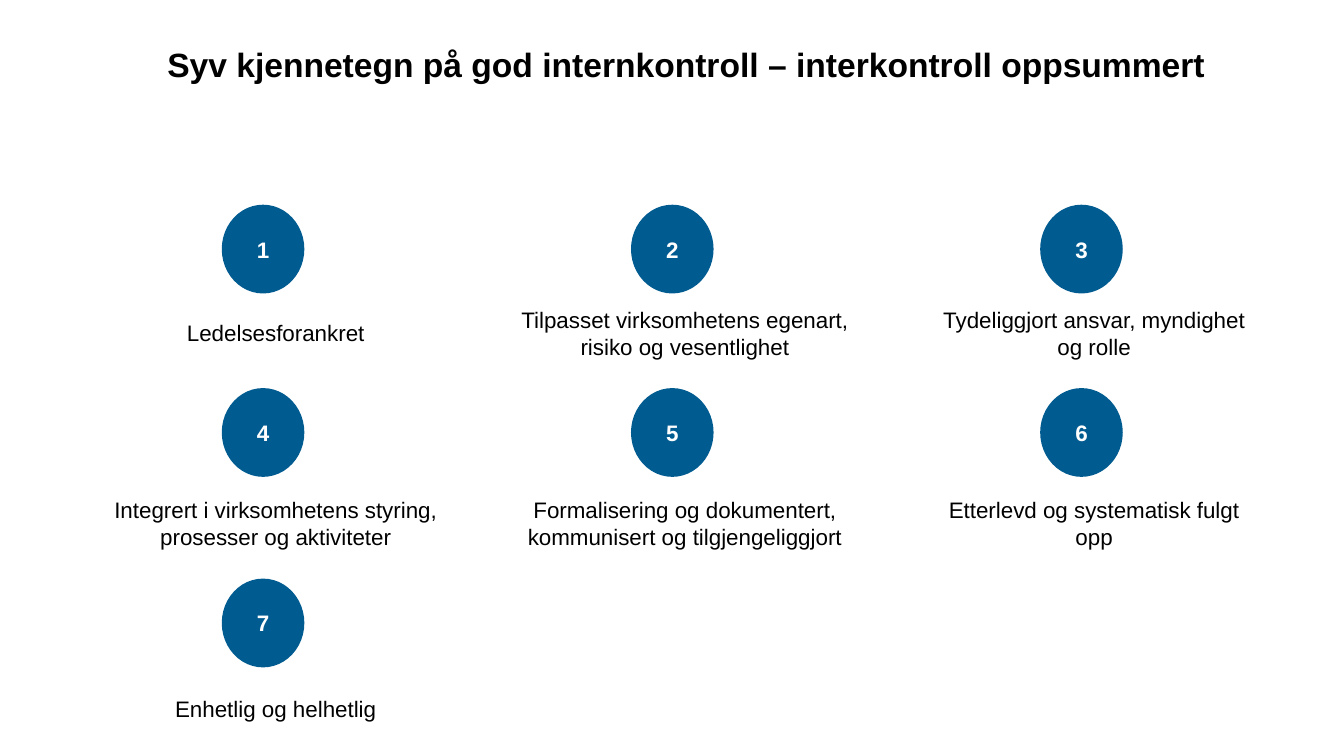
from pptx import Presentation
from pptx.dml.color import RGBColor
from pptx.enum.shapes import MSO_SHAPE
from pptx.enum.text import MSO_ANCHOR, PP_ALIGN
from pptx.util import Pt

BLUE = RGBColor(0x00, 0x5B, 0x91)
BLACK = RGBColor(0x00, 0x00, 0x00)
WHITE = RGBColor(0xFF, 0xFF, 0xFF)

TITLE = "Syv kjennetegn på god internkontroll – interkontroll oppsummert"
TRAITS = [
    "Ledelsesforankret",
    "Tilpasset virksomhetens egenart, risiko og vesentlighet",
    "Tydeliggjort ansvar, myndighet og rolle",
    "Integrert i virksomhetens styring, prosesser og aktiviteter",
    "Formalisering og dokumentert, kommunisert og tilgjengeliggjort",
    "Etterlevd og systematisk fulgt opp",
    "Enhetlig og helhetlig",
]

COLUMNS = 3
GRID_LEFT, COLUMN_PITCH = 51.1, 292.3
TRAIT_WIDTH, LABEL_HEIGHT = 273.6, 38.9
CIRCLE_WIDTH, CIRCLE_HEIGHT = 59, 63.4
ROWS = [(146.2, 110.9), (277.2, 115.9), (413.3, 112.3)]  # top, height


def format_text(frame, text, size, color, bold=False):
    frame.word_wrap = True
    frame.text = text
    font = frame.paragraphs[0].runs[0].font
    font.name, font.size, font.bold = "Arial", Pt(size), bold
    font.color.rgb = color


def set_margins(frame, left, top, right, bottom):
    frame.margin_left, frame.margin_top = Pt(left), Pt(top)
    frame.margin_right, frame.margin_bottom = Pt(right), Pt(bottom)


def add_title(slide, left, top, width, height):
    title = slide.shapes.add_textbox(Pt(left), Pt(top), Pt(width), Pt(height))
    set_margins(title.text_frame, 0, 0, 0, 0)
    format_text(title.text_frame, TITLE, 24, BLACK, bold=True)
    title.text_frame.paragraphs[0].line_spacing = 0.9


def add_centred_shape(slide, kind, left, top, width, height, text, color, bold=False):
    shape = slide.shapes.add_shape(kind, Pt(left), Pt(top), Pt(width), Pt(height))
    shape.shadow.inherit = False
    shape.line.fill.background()
    format_text(shape.text_frame, text, 16, color, bold)
    shape.text_frame.vertical_anchor = MSO_ANCHOR.MIDDLE
    shape.text_frame.paragraphs[0].alignment = PP_ALIGN.CENTER
    return shape


def add_trait(slide, left, top, width, height, number, text):
    """Numbered circle at the top of the box, label along its bottom edge."""
    circle = add_centred_shape(
        slide, MSO_SHAPE.OVAL, left + (width - CIRCLE_WIDTH) / 2, top,
        CIRCLE_WIDTH, CIRCLE_HEIGHT, str(number), WHITE, bold=True)
    circle.fill.solid()
    circle.fill.fore_color.rgb = BLUE
    label = add_centred_shape(
        slide, MSO_SHAPE.ROUNDED_RECTANGLE, left, top + height - LABEL_HEIGHT,
        width, LABEL_HEIGHT, text, BLACK)
    label.fill.background()
    set_margins(label.text_frame, 25.2, 3.6, 7.2, 3.6)


def add_trait_grid(slide, left):
    for index, text in enumerate(TRAITS):
        row, column = divmod(index, COLUMNS)
        top, height = ROWS[row]
        add_trait(slide, left + column * COLUMN_PITCH, top,
                  TRAIT_WIDTH, height, index + 1, text)


def main():
    presentation = Presentation()
    presentation.slide_width, presentation.slide_height = Pt(960), Pt(540)
    slide = presentation.slides.add_slide(presentation.slide_layouts[6])
    add_title(slide, 119.5, 34.6, 789.1, 90.7)
    add_trait_grid(slide, GRID_LEFT)
    presentation.save("out.pptx")


if __name__ == "__main__":
    main()
